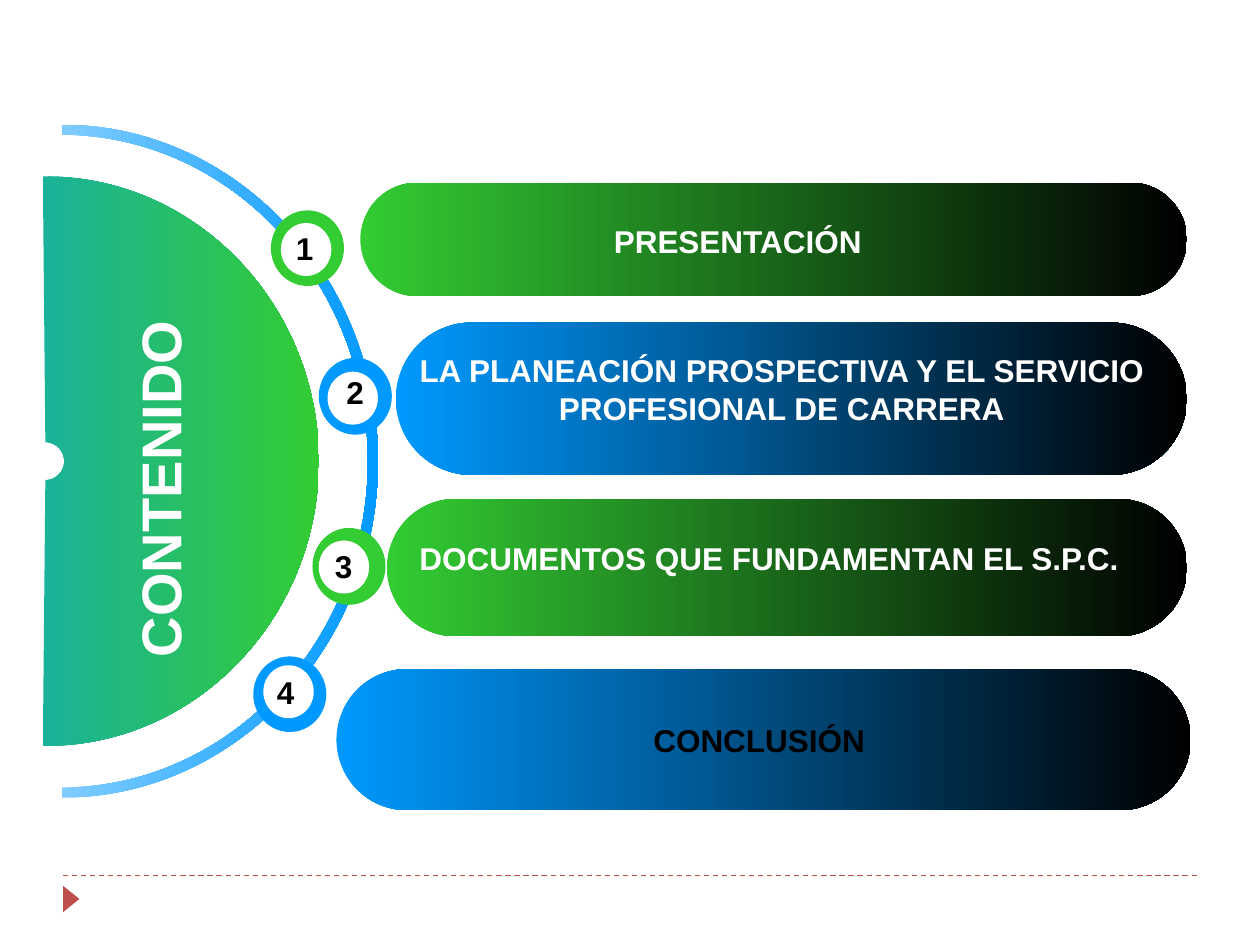
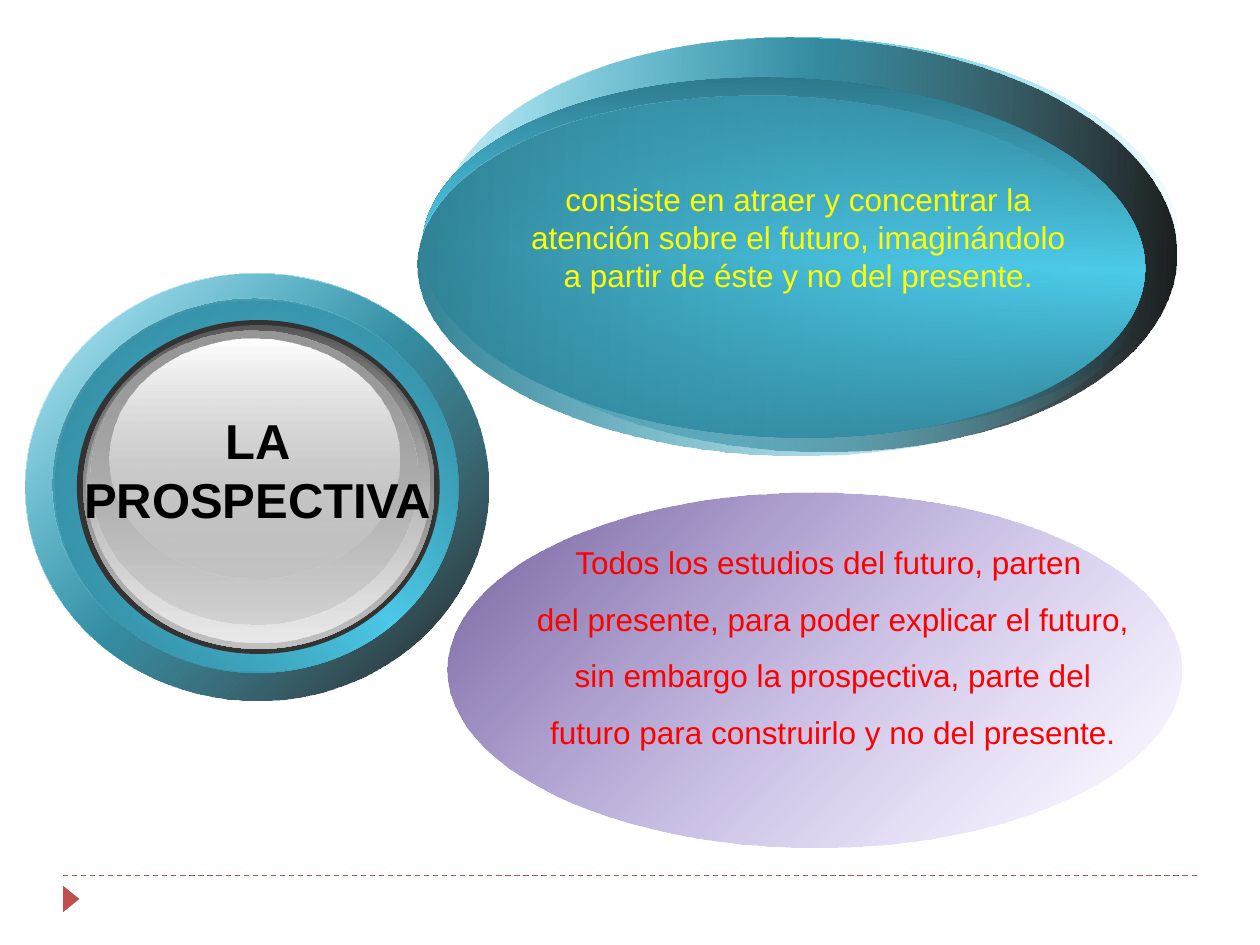
from dataclasses import dataclass

from lxml import etree
from pptx import Presentation
from pptx.dml.color import RGBColor
from pptx.enum.dml import MSO_LINE
from pptx.enum.shapes import MSO_CONNECTOR, MSO_SHAPE
from pptx.enum.text import MSO_ANCHOR, MSO_AUTO_SIZE, PP_ALIGN
from pptx.oxml.ns import qn
from pptx.util import Inches, Pt

OVAL = MSO_SHAPE.OVAL
ROUNDED = MSO_SHAPE.ROUNDED_RECTANGLE
TRIANGLE = MSO_SHAPE.ISOSCELES_TRIANGLE
STRAIGHT = MSO_CONNECTOR.STRAIGHT
DASH = MSO_LINE.DASH
LEFT, CENTER, RIGHT = PP_ALIGN.LEFT, PP_ALIGN.CENTER, PP_ALIGN.RIGHT
TOP, MIDDLE = MSO_ANCHOR.TOP, MSO_ANCHOR.MIDDLE
FIT_SHAPE, NO_FIT = MSO_AUTO_SIZE.SHAPE_TO_FIT_TEXT, MSO_AUTO_SIZE.NONE

FONT = "Arial"
TITLE_ONLY = 5
ARC_HANDLE = 0.55
COLORS = {
    "white": "FFFFFF", "black": "000000", "accent": "C0504D",
    "green": "33CC33", "blue": "0099FF", "sky": "80CCFF", "teal": "1AB299",
    "cyan": "4CCAE8", "deep": "296D7E", "petrol": "308093",
    "charcoal": "333333", "gray": "595959", "steel": "989898",
    "silver": "C0C0C0", "pearl": "E9E9E9", "purple": "715F9A",
    "lilac": "B296F2", "yellow": "FFFF00", "red": "FF0000",
}

Box = tuple[float, float, float, float]
Point = tuple[float, float]


@dataclass(frozen=True)
class Stop:
    position: int
    color: str
    opacity: int = 100


@dataclass(frozen=True)
class Gradient:
    stops: tuple[Stop, ...]
    angle: int = 0


@dataclass(frozen=True)
class TextStyle:
    size: int
    color: str
    bold: bool = False
    align: PP_ALIGN = CENTER
    spacing: float = 1.0


@dataclass(frozen=True)
class Topic:
    color: str
    bar: Box
    ring: Box
    dot: Point
    digit: Point
    lines: tuple[str, ...]
    caption: Box | None = None
    align: PP_ALIGN = CENTER


@dataclass(frozen=True)
class HalfRing:
    center: Point
    outer: Point
    inner: Point
    gradient: Gradient
    overhang: float = 0


@dataclass(frozen=True)
class Ellipse:
    box: Box
    fill: str | Gradient
    rotation: float = 0


def blend(start: Stop, end: Stop, angle: int = 0) -> Gradient:
    return Gradient((start, end), angle)


def fade(start: str, end: str) -> Gradient:
    return blend(Stop(0, start), Stop(100, end))


def sheen(edge: str, middle: str, angle: int) -> Gradient:
    return Gradient((Stop(0, edge), Stop(50, middle), Stop(100, edge)), angle)


def glass_ellipses(boxes: tuple[Box, ...], angle: int, rotation: float = 0) -> list[Ellipse]:
    fills = (
        sheen("white", "cyan", angle),
        blend(Stop(0, "cyan", 32), Stop(100, "black", 90), angle),
        sheen("deep", "cyan", angle + 270),
        blend(Stop(0, "petrol"), Stop(100, "cyan", 0), angle),
    )
    return [Ellipse(box, fill, rotation) for box, fill in zip(boxes, fills)]


TOPICS = [
    Topic("green", (2.86, 1.45, 6.56, 0.9), (2.15, 1.67, 0.58, 0.6), (2.23, 1.77), (2.25, 1.77),
          ("PRESENTACIÓN",), (4.76, 1.71, 2.19, 0.4)),
    Topic("blue", (3.14, 2.56, 6.28, 1.21), (2.53, 2.84, 0.58, 0.61), (2.6, 2.95), (2.65, 2.91),
          ("LA PLANEACIÓN PROSPECTIVA Y EL SERVICIO", "PROFESIONAL DE CARRERA"),
          (3.2, 2.74, 6.01, 0.71)),
    Topic("green", (3.07, 3.96, 6.35, 1.09), (2.48, 4.19, 0.58, 0.61), (2.53, 4.29), (2.56, 4.29),
          ("DOCUMENTOS QUE FUNDAMENTAN EL S.P.C.",), (3.23, 4.23, 5.81, 0.4), LEFT),
    Topic("blue", (2.67, 5.31, 6.78, 1.12), (2.01, 5.21, 0.58, 0.6), (2.09, 5.28), (2.1, 5.29),
          ("CONCLUSIÓN ",)),
]

HALF_RINGS = [
    HalfRing((0.49, 3.66), (2.51, 2.67), (2.43, 2.59), fade("sky", "blue")),
    HalfRing((0.36, 3.66), (2.17, 2.26), (0.15, 0.15), fade("teal", "green"), 0.02),
]

ELLIPSES = [
    *glass_ellipses(((3.52, 0.3, 5.85, 3.14), (3.47, 0.3, 5.87, 3.28),
                     (3.35, 0.62, 5.74, 2.85), (3.31, 0.76, 5.74, 2.85)), 0, 2.2),
    *glass_ellipses(((0.2, 2.17, 3.68, 3.39), (0.2, 2.17, 3.68, 3.39),
                     (0.44, 2.39, 3.2, 2.95), (0.42, 2.37, 3.2, 2.95)), 45),
    Ellipse((0.61, 2.54, 2.88, 2.65), "charcoal"),
    Ellipse((0.66, 2.58, 2.79, 2.57), blend(Stop(0, "gray"), Stop(100, "silver"), 90)),
    Ellipse((0.69, 2.6, 2.72, 2.5), blend(Stop(0, "silver", 0), Stop(100, "pearl"), 90)),
    Ellipse((0.72, 2.62, 2.59, 2.34), blend(Stop(0, "steel"), Stop(100, "silver", 48), 90)),
    Ellipse((0.87, 2.69, 2.3, 1.9), blend(Stop(0, "white"), Stop(100, "silver", 38), 90)),
    Ellipse((3.55, 3.91, 5.83, 2.82),
            blend(Stop(0, "purple"), Stop(100, "lilac", 0), 45), 0.1),
]


def rgb(color: str) -> RGBColor:
    return RGBColor.from_string(COLORS[color])


def apply_gradient(shape, gradient: Gradient) -> None:
    shape.fill.background()
    properties = shape.element.spPr
    fill = etree.Element(qn("a:gradFill"), rotWithShape="1")
    stop_list = etree.SubElement(fill, qn("a:gsLst"))
    for stop in gradient.stops:
        entry = etree.SubElement(stop_list, qn("a:gs"), pos=str(stop.position * 1000))
        color = etree.SubElement(entry, qn("a:srgbClr"), val=COLORS[stop.color])
        if stop.opacity < 100:
            etree.SubElement(color, qn("a:alpha"), val=str(stop.opacity * 1000))
    etree.SubElement(fill, qn("a:lin"), ang=str(gradient.angle * 60000), scaled="0")
    properties.replace(properties.find(qn("a:noFill")), fill)


def paint(shape, fill: str | Gradient) -> None:
    if isinstance(fill, Gradient):
        apply_gradient(shape, fill)
    else:
        shape.fill.solid()
        shape.fill.fore_color.rgb = rgb(fill)
    shape.line.fill.background()
    shape.shadow.inherit = False


def add_filled(slide, kind: MSO_SHAPE, box: Box, fill: str | Gradient, rotation: float = 0):
    shape = slide.shapes.add_shape(kind, *map(Inches, box))
    shape.rotation = rotation
    paint(shape, fill)
    return shape


def write(shape, lines: tuple[str, ...], style: TextStyle, wrap: bool = False) -> None:
    text_frame = shape.text_frame
    text_frame.text = "\n".join(lines)
    text_frame.word_wrap = wrap
    for paragraph in text_frame.paragraphs:
        paragraph.alignment = style.align
        paragraph.line_spacing = style.spacing
        for run in paragraph.runs:
            run.font.name = FONT
            run.font.size = Pt(style.size)
            run.font.bold = style.bold
            run.font.color.rgb = rgb(style.color)


def add_text(slide, box: Box, lines: tuple[str, ...], style: TextStyle, wrap: bool = False) -> None:
    text_box = slide.shapes.add_textbox(*map(Inches, box))
    write(text_box, lines, style, wrap)
    text_box.text_frame.auto_size = FIT_SHAPE


def place_title(slide, box: Box, text: str, style: TextStyle,
                rotation: float = 0, wrap: bool = False) -> None:
    title = slide.shapes.title
    title.left, title.top, title.width, title.height = map(Inches, box)
    title.rotation = rotation
    write(title, (text,), style, wrap)
    title.text_frame.vertical_anchor = TOP
    title.text_frame.auto_size = NO_FIT
    title.element.getparent().append(title.element)


def right_half(center: Point, radii: Point) -> list[Point]:
    x, y = center
    return [(x, y - radii[1]), (x + radii[0], y), (x, y + radii[1])]


def curve_segment(line, start: Point, leaves_level: bool) -> None:
    point = line.find(qn("a:pt"))
    end = int(point.get("x")), int(point.get("y"))
    corner = (end[0], start[1]) if leaves_level else (start[0], end[1])
    curve = etree.Element(qn("a:cubicBezTo"))
    for anchor in (start, end):
        x, y = (round(a + ARC_HANDLE * (c - a)) for a, c in zip(anchor, corner))
        etree.SubElement(curve, qn("a:pt"), x=str(x), y=str(y))
    curve.append(point)
    line.getparent().replace(line, curve)


def draw_half_ring(slide, ring: HalfRing) -> None:
    outer = right_half(ring.center, ring.outer)
    inner = right_half(ring.center, ring.inner)
    left = ring.center[0] - ring.overhang
    edge = [(left, outer[2][1]), (left, outer[0][1])] if ring.overhang else []
    outline = [*reversed(inner), *edge[1:], *outer, *edge[:1]]
    points = [(Inches(x), Inches(y)) for x, y in outline]
    builder = slide.shapes.build_freeform(*points[0])
    builder.add_line_segments(points[1:], close=True)
    shape = builder.convert_to_shape()
    nodes = list(shape.element.iter(qn("a:pt")))
    positions = [(int(node.get("x")), int(node.get("y"))) for node in nodes]
    lines = list(shape.element.iter(qn("a:lnTo")))
    outer_start = 3 + len(edge[1:])
    for index in (0, 1, outer_start, outer_start + 1):
        curve_segment(lines[index], positions[index], index in (0, outer_start))
    paint(shape, ring.gradient)


def draw_topic(slide, number: int, topic: Topic) -> None:
    bar = add_filled(slide, ROUNDED, topic.bar, fade(topic.color, "black"))
    bar.adjustments[0] = 0.5
    if topic.caption:
        add_text(slide, topic.caption, topic.lines, TextStyle(18, "white", True, topic.align))
    else:
        write(bar, topic.lines, TextStyle(18, "black", True))
        bar.text_frame.vertical_anchor = MIDDLE
    add_filled(slide, OVAL, topic.ring, topic.color)
    add_filled(slide, OVAL, (*topic.dot, 0.4, 0.42), "white")
    add_text(slide, (*topic.digit, 0.36, 0.44), (str(number),),
             TextStyle(18, "black", True, LEFT))


def draw_contents(slide) -> None:
    for ring in HALF_RINGS:
        draw_half_ring(slide, ring)
    for number, topic in enumerate(TOPICS, 1):
        draw_topic(slide, number, topic)
    place_title(slide, (-0.18, 3.57, 2.89, 0.64), "CONTENIDO",
                TextStyle(32, "white", True, RIGHT), rotation=270)


def draw_foresight(slide) -> None:
    for ellipse in ELLIPSES:
        add_filled(slide, OVAL, ellipse.box, ellipse.fill, ellipse.rotation)
    add_text(slide, (3.91, 1.38, 4.92, 1.01), (
        "consiste en atraer y concentrar la ",
        "atención sobre el futuro, imaginándolo ",
        "a partir de éste y no del presente. ",
    ), TextStyle(18, "yellow"), wrap=True)
    add_text(slide, (4.11, 4.11, 5, 1.92), (
        "Todos los estudios del futuro, parten ",
        "del presente, para poder explicar el futuro, sin embargo la prospectiva, "
        "parte del futuro para construirlo y no del presente.",
    ), TextStyle(18, "red", spacing=1.5), wrap=True)
    place_title(slide, (0.56, 3.21, 2.97, 1.04), "LA PROSPECTIVA",
                TextStyle(28, "black", True), wrap=True)


def move_footer_to_layout(slide, layout) -> None:
    rule = slide.shapes.add_connector(
        STRAIGHT, Inches(0.5), Inches(6.95), Inches(9.5), Inches(6.95))
    rule.line.color.rgb = rgb("accent")
    rule.line.width = Pt(0.75)
    rule.line.dash_style = DASH
    etree.SubElement(rule.element.spPr, qn("a:effectLst"))
    marker = add_filled(slide, TRIANGLE, (0.46, 7.07, 0.21, 0.13), "accent", 90)
    for shape in (rule, marker):
        layout.element.cSld.spTree.append(shape.element)


def main() -> None:
    presentation = Presentation()
    presentation.slide_width = Inches(10)
    presentation.slide_height = Inches(7.5)
    layout = presentation.slide_layouts[TITLE_ONLY]
    for draw in (draw_contents, draw_foresight):
        slide = presentation.slides.add_slide(layout)
        draw(slide)
    move_footer_to_layout(slide, layout)
    presentation.save("out.pptx")


if __name__ == "__main__":
    main()
